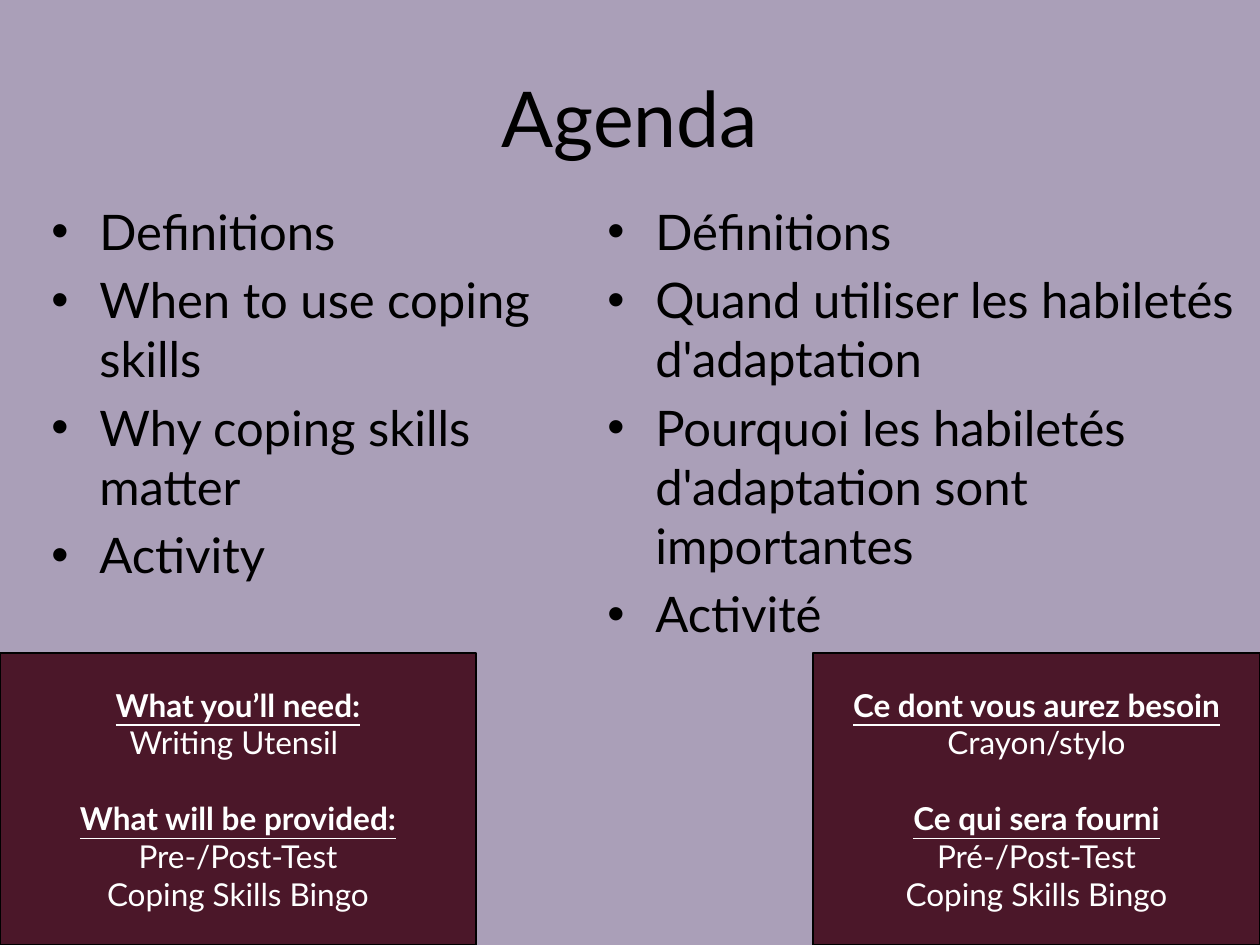
from dataclasses import dataclass

from lxml import etree
from pptx import Presentation
from pptx.dml.color import RGBColor
from pptx.enum.shapes import MSO_SHAPE
from pptx.enum.text import MSO_ANCHOR, PP_ALIGN
from pptx.oxml.ns import qn
from pptx.util import Pt

RECT = MSO_SHAPE.RECTANGLE
MIDDLE, TOP = MSO_ANCHOR.MIDDLE, MSO_ANCHOR.TOP
CENTER, LEFT = PP_ALIGN.CENTER, PP_ALIGN.LEFT


@dataclass(frozen=True)
class Theme:
    font: str = "Lato"
    background: RGBColor = RGBColor(0xAA, 0x9F, 0xB8)
    ink: RGBColor = RGBColor(0, 0, 0)
    panel: RGBColor = RGBColor(0x4B, 0x17, 0x29)
    panel_text: RGBColor = RGBColor(0xFF, 0xFF, 0xFF)
    title_size: int = 44
    body_size: int = 28
    panel_size: int = 18
    bullet_gap: float = 5.6
    group_gap: float = 21.6
    line_width: float = 0.75


THEME = Theme()

WIDTH, HEIGHT = 1260, 945
BODY_TOP, PANEL_TOP, INDENT = 195, 653, 48

TITLE = ("Agenda", (63, 38, 1134, 157))
AGENDAS = [
    (39, 557, 431, ["Definitions", "When to use coping skills",
                    "Why coping skills matter", "Activity"]),
    (595, 665, 624, ["Définitions", "Quand utiliser les habiletés d'adaptation",
                     "Pourquoi les habiletés d'adaptation sont importantes", "Activité"]),
]
PANELS = [
    (0, 476, [("What you’ll need:", ["Writing Utensil "]),
              ("What will be provided:", ["Pre-/Post-Test", "Coping Skills Bingo"])]),
    (813, 447, [("Ce dont vous aurez besoin", ["Crayon/stylo"]),
                ("Ce qui sera fourni", ["Pré-/Post-Test", "Coping Skills Bingo"])]),
]


def px(n):
    return round(n * 914400 / 126)


def add_text_box(s, box, anchor):
    tf = s.shapes.add_textbox(*map(px, box)).text_frame
    tf.word_wrap = True
    tf.vertical_anchor = anchor
    return tf


def add_line(tf, i, text, size, color, align, gap=0, heading=False):
    p = tf.paragraphs[0] if i == 0 else tf.add_paragraph()
    p.alignment = align
    p.space_before = Pt(gap if i else 0)
    r = p.add_run()
    r.text = text
    r.font.name = THEME.font
    r.font.size = Pt(size)
    r.font.color.rgb = color
    r.font.bold = r.font.underline = heading
    return p


def add_bullet(p):
    pPr = p._p.get_or_add_pPr()
    pPr.set("marL", str(px(INDENT)))
    pPr.set("indent", str(-px(INDENT)))
    etree.SubElement(pPr, qn("a:buFont")).set("typeface", "Arial")
    etree.SubElement(pPr, qn("a:buChar")).set("char", "•")


def add_agenda(s, left, width, height, items):
    tf = add_text_box(s, (left, BODY_TOP, width, height), TOP)
    for i, item in enumerate(items):
        add_bullet(add_line(tf, i, item, THEME.body_size, THEME.ink, LEFT, THEME.bullet_gap))


def add_panel(s, left, width, groups):
    box = (left, PANEL_TOP, width, HEIGHT - PANEL_TOP)
    sp = s.shapes.add_shape(RECT, *map(px, box))
    sp.shadow.inherit = False
    sp.fill.solid()
    sp.fill.fore_color.rgb = THEME.panel
    sp.line.color.rgb = THEME.ink
    sp.line.width = Pt(THEME.line_width)
    tf = sp.text_frame
    tf.word_wrap = True
    tf.vertical_anchor = MIDDLE
    lines = []
    for heading, items in groups:
        lines.append((heading, THEME.group_gap, True))
        lines += [(item, 0, False) for item in items]
    for i, (text, gap, heading) in enumerate(lines):
        add_line(tf, i, text, THEME.panel_size, THEME.panel_text, CENTER, gap, heading)


def main():
    prs = Presentation()
    prs.slide_width, prs.slide_height = px(WIDTH), px(HEIGHT)
    s = prs.slides.add_slide(prs.slide_layouts[6])
    s.background.fill.solid()
    s.background.fill.fore_color.rgb = THEME.background
    text, box = TITLE
    add_line(add_text_box(s, box, MIDDLE), 0, text, THEME.title_size, THEME.ink, CENTER)
    for agenda in AGENDAS:
        add_agenda(s, *agenda)
    for panel in PANELS:
        add_panel(s, *panel)
    prs.save("out.pptx")


if __name__ == "__main__":
    main()
